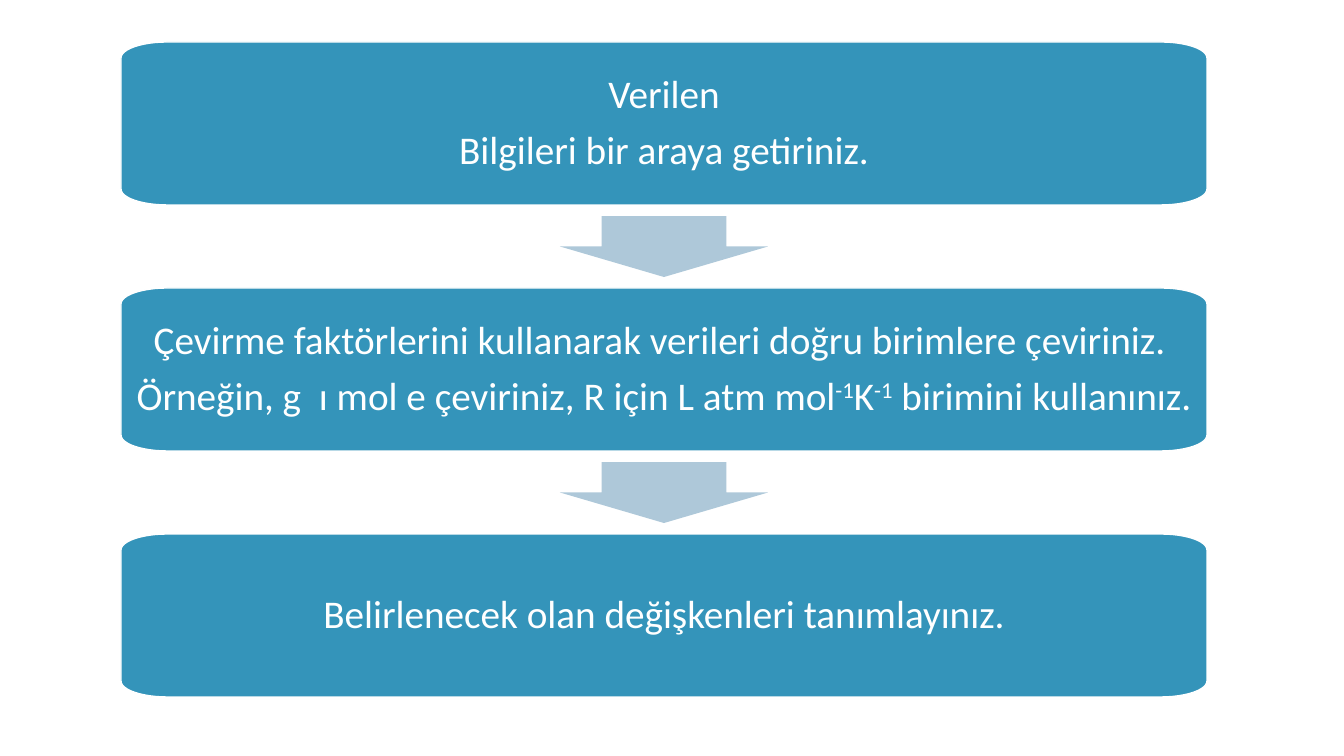
import math

import pptx
import pptx.dml.color
import pptx.enum.shapes
import pptx.enum.text
import pptx.util

PX = 914400 / 100.8
BOX_LEFT, BOX_TOP, BOX_W, BOX_H = 121, 42, 1086, 163
CORNER_W, CORNER_H = 46, 16
ARROW_W, ARROW_H, ARROW_GAP = 208, 61, 11
PITCH = BOX_H + ARROW_H + 2 * ARROW_GAP
ARC_STEPS = 12

STEPS = [
    [[("Verilen", False)], [("Bilgileri bir araya getiriniz.", False)]],
    [
        [("Çevirme faktörlerini kullanarak verileri doğru birimlere çeviriniz. ", False)],
        [
            ("Örneğin, g  ı mol e çeviriniz, R için L atm mol", False),
            ("-1", True),
            ("K", False),
            ("-1", True),
            (" birimini kullanınız.", False),
        ],
    ],
    [[("Belirlenecek olan değişkenleri tanımlayınız.", False)]],
]


def px(n):
    """Convert pixels to EMU."""
    return pptx.util.Emu(round(n * PX))


def color(value):
    """Turn a hex string into a colour."""
    return pptx.dml.color.RGBColor.from_string(value)


def paint(sp, fill):
    """Give a shape a flat fill without a shadow."""
    sp.shadow.inherit = False
    sp.fill.solid()
    sp.fill.fore_color.rgb = color(fill)


def rounded_outline(x, y, w, h):
    """List the points of a box with elliptical corners, clockwise."""
    left, right = x + CORNER_W, x + w - CORNER_W
    top, bottom = y + CORNER_H, y + h - CORNER_H
    corners = [(left, top), (right, top), (right, bottom), (left, bottom)]
    points = []
    for i, (cx, cy) in enumerate(corners):
        for step in range(ARC_STEPS + 1):
            angle = math.pi / 2 * (2 + i + step / ARC_STEPS)
            points.append((px(cx + CORNER_W * math.cos(angle)),
                           px(cy + CORNER_H * math.sin(angle))))
    return points


def add_text(tf, paragraphs):
    """Write centred paragraphs run by run."""
    tf.word_wrap = True
    tf.vertical_anchor = pptx.enum.text.MSO_ANCHOR.MIDDLE
    tf.margin_left = tf.margin_right = tf.margin_top = tf.margin_bottom = px(6)
    for i, runs in enumerate(paragraphs):
        p = tf.add_paragraph() if i else tf.paragraphs[0]
        p.alignment = pptx.enum.text.PP_ALIGN.CENTER
        p.line_spacing = 0.9
        p.space_after = pptx.util.Pt(9.8)
        for text, raised in runs:
            r = p.add_run()
            r.text = text
            r.font.name = "Calibri"
            r.font.size = pptx.util.Pt(28)
            r.font.color.rgb = color("FFFFFF")
            if raised:
                r.font._element.set("baseline", "30000")


def add_step(slide, x, y, w, h, paragraphs):
    """Draw one step box with its text."""
    points = rounded_outline(x, y, w, h)
    builder = slide.shapes.build_freeform(*points[0], scale=1.0)
    builder.add_line_segments(points[1:], close=True)
    sp = builder.convert_to_shape()
    paint(sp, "3494BA")
    sp.line.color.rgb = color("FFFFFF")
    sp.line.width = pptx.util.Pt(1)
    add_text(sp.text_frame, paragraphs)


def add_arrow(slide, x, y, w, h):
    """Draw the arrow that leads to the next step."""
    sp = slide.shapes.add_shape(
        pptx.enum.shapes.MSO_SHAPE.DOWN_ARROW, px(x), px(y), px(w), px(h))
    sp.adjustments[0] = 0.6
    sp.adjustments[1] = 0.5
    paint(sp, "AEC8D9")
    sp.line.fill.background()


def add_flow(slide, x, y, w):
    """Stack the steps with an arrow between each pair."""
    for i, paragraphs in enumerate(STEPS):
        top = y + i * PITCH
        if i:
            add_arrow(slide, x + (w - ARROW_W) / 2, top - ARROW_GAP - ARROW_H,
                      ARROW_W, ARROW_H)
        add_step(slide, x, top, w, BOX_H, paragraphs)


def main():
    """Build and save the slide."""
    prs = pptx.Presentation()
    prs.slide_width, prs.slide_height = px(1344), px(756)
    slide = prs.slides.add_slide(prs.slide_layouts[6])
    add_flow(slide, BOX_LEFT, BOX_TOP, BOX_W)
    prs.save("out.pptx")


if __name__ == "__main__":
    main()
